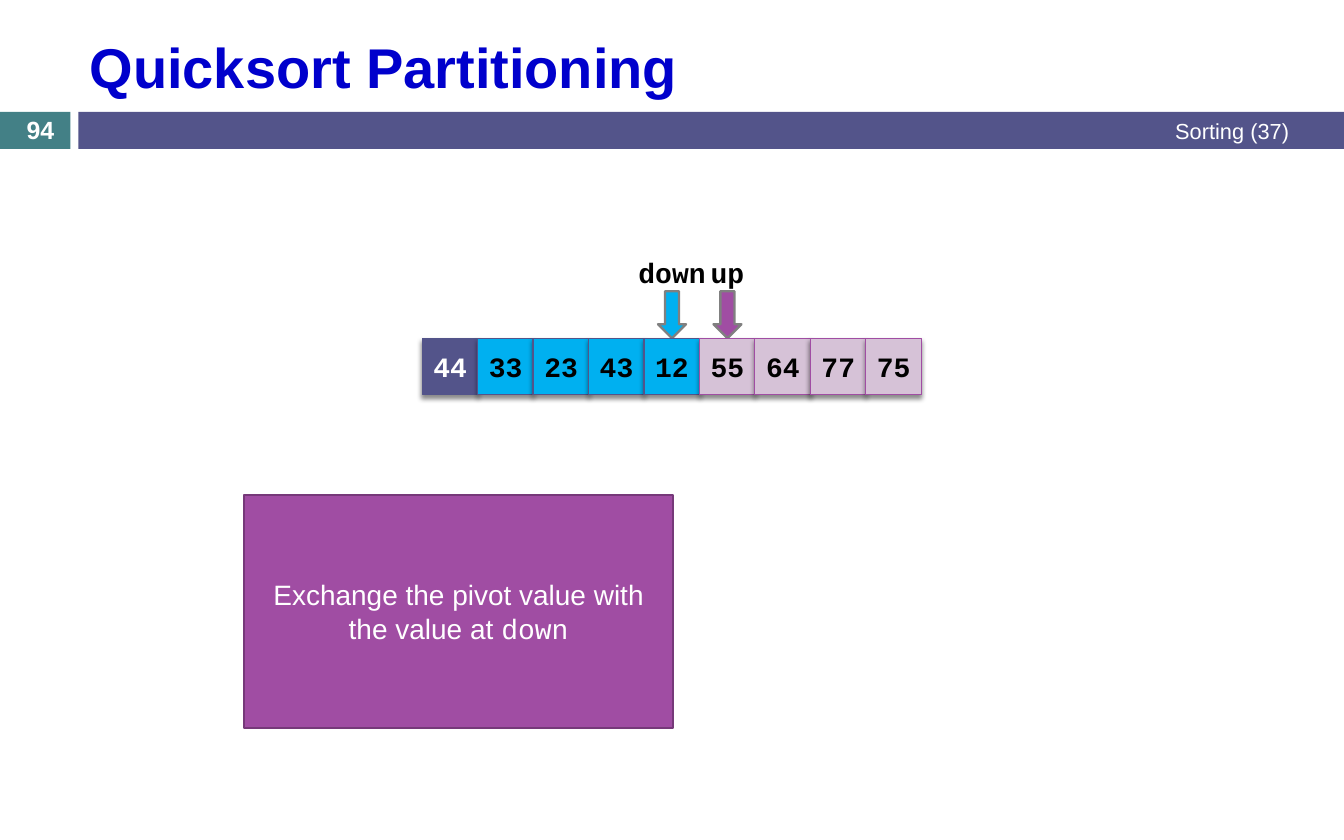
from dataclasses import dataclass

from lxml.etree import SubElement
from pptx import Presentation
from pptx.dml.color import RGBColor
from pptx.enum.shapes import MSO_SHAPE
from pptx.enum.text import MSO_ANCHOR, PP_ALIGN
from pptx.oxml.ns import qn
from pptx.util import Inches, Pt


@dataclass(frozen=True)
class Theme:
    """Colours, fonts and type sizes of the slide."""
    title: str = "0000CC"
    teal: str = "438086"
    indigo: str = "53548A"
    purple: str = "A04DA3"
    dark_purple: str = "763979"
    lilac: str = "D6C2D7"
    cyan: str = "00B0F0"
    gray: str = "808080"
    white: str = "FFFFFF"
    black: str = "000000"
    sans: str = "Arial"
    mono: str = "Courier New"
    title_size: int = 36
    body_size: int = 18
    number_size: int = 16
    footer_size: int = 14
    outline: float = 1.5
    cell_outline: float = 0.79


class SlideBuilder:
    """Holds the theme and the current slide and draws each kind of element."""

    def __init__(self, slide, theme):
        """Start drawing on a slide with a theme."""
        self.slide = slide
        self.theme = theme

    def set_text(self, shape, text, size, color, font=None, bold=False,
                 align=PP_ALIGN.CENTER, anchor=MSO_ANCHOR.MIDDLE, code=""):
        """Set the text of a shape, with an optional ending in code type."""
        frame = shape.text_frame
        frame.word_wrap = True
        frame.vertical_anchor = anchor
        paragraph = frame.paragraphs[0]
        paragraph.text = text
        paragraph.alignment = align
        if code:
            paragraph.add_run().text = code
        for run in paragraph.runs:
            run.font.name = font or self.theme.sans
            run.font.size = Pt(size)
            run.font.bold = bold
            run.font.color.rgb = RGBColor.from_string(color)
        if code:
            paragraph.runs[-1].font.name = self.theme.mono

    def title(self, text, left, top, width, height):
        """Move and fill the title placeholder."""
        shape = self.slide.shapes.title
        shape.left, shape.top = Inches(left), Inches(top)
        shape.width, shape.height = Inches(width), Inches(height)
        self.set_text(shape, text, self.theme.title_size, self.theme.title,
                      bold=True, align=PP_ALIGN.LEFT)

    def text_box(self, text, left, top, width, height, size, color, **style):
        """Add a wrapped text box."""
        box = self.slide.shapes.add_textbox(
            Inches(left), Inches(top), Inches(width), Inches(height))
        self.set_text(box, text, size, color, **style)

    def block(self, left, top, width, height, fill, line=None,
              line_width=None, kind=MSO_SHAPE.RECTANGLE, parent=None):
        """Add a filled preset shape to the slide or to a group."""
        shape = (parent or self.slide).shapes.add_shape(
            kind, Inches(left), Inches(top), Inches(width), Inches(height))
        shape.shadow.inherit = False
        shape.fill.solid()
        shape.fill.fore_color.rgb = RGBColor.from_string(fill)
        if line:
            shape.line.color.rgb = RGBColor.from_string(line)
            shape.line.width = Pt(line_width or self.theme.outline)
        else:
            shape.line.fill.background()
        return shape

    def drop_shadow(self, shape):
        """Give a shape a soft shadow below it."""
        effects = shape.element.spPr.find(qn("a:effectLst"))
        shadow = SubElement(effects, qn("a:outerShdw"), blurRad=str(Pt(3)),
                            dist=str(Pt(2.4)), dir="5400000", rotWithShape="0")
        color = SubElement(shadow, qn("a:srgbClr"), val=self.theme.black)
        SubElement(color, qn("a:alpha"), val="45000")

    def pointer(self, name, center, fill):
        """Add a named arrow pointing down at a cell."""
        width, label_width = 0.25, 0.82
        self.block(center - width / 2, 2.6, width, 0.42, fill, self.theme.gray,
                   kind=MSO_SHAPE.DOWN_ARROW)
        self.text_box(name, center - label_width / 2, 2.23, label_width, 0.4,
                      self.theme.body_size, self.theme.black, bold=True,
                      font=self.theme.mono, anchor=MSO_ANCHOR.TOP)

    def array(self, cells, left, top, side, pitch):
        """Add a grouped row of array cells."""
        group = self.slide.shapes.add_group_shape()
        for index, (value, fill, line, color) in enumerate(cells):
            cell = self.block(left + index * pitch, top, side, side, fill, line,
                              self.theme.cell_outline, parent=group)
            self.drop_shadow(cell)
            self.set_text(cell, str(value), self.theme.body_size, color,
                          font=self.theme.mono, bold=True)


def main():
    """Build the slide and save it."""
    presentation = Presentation()
    presentation.slide_width = Inches(12)
    presentation.slide_height = Inches(7.5)
    theme = Theme()
    slide = presentation.slides.add_slide(presentation.slide_layouts[5])
    builder = SlideBuilder(slide, theme)

    builder.title("Quicksort Partitioning", 0.7, 0.19, 10.91, 0.8)
    builder.block(0, 1, 0.63, 0.33, theme.teal)
    builder.block(0.7, 1, 11.3, 0.33, theme.indigo)
    builder.text_box("94", 0, 1.01, 0.72, 0.3, theme.number_size, theme.white,
                     bold=True)
    builder.text_box("Sorting (37)", 4.5, 0.99, 7.11, 0.35, theme.footer_size,
                     theme.white, align=PP_ALIGN.RIGHT)

    note = builder.block(2.18, 4.42, 3.83, 2.08, theme.purple, theme.dark_purple)
    builder.set_text(note, "Exchange the pivot value with the value at ",
                     theme.body_size, theme.white, code="down")

    pivot, smaller, larger = 44, (33, 23, 43, 12), (55, 64, 77, 75)
    cells = [(pivot, theme.indigo, theme.indigo, theme.white)]
    cells += [(value, theme.cyan, theme.indigo, theme.black) for value in smaller]
    cells += [(value, theme.lilac, theme.purple, theme.black) for value in larger]
    left, side = 3.77, 0.5
    pitch = (7.73 - left) / (len(cells) - 1)
    down = len(smaller)
    for name, index, fill in (("up", down + 1, theme.purple),
                              ("down", down, theme.cyan)):
        builder.pointer(name, left + index * pitch + side / 2, fill)
    builder.array(cells, left, 3.02, side, pitch)

    presentation.save("out.pptx")


if __name__ == "__main__":
    main()
